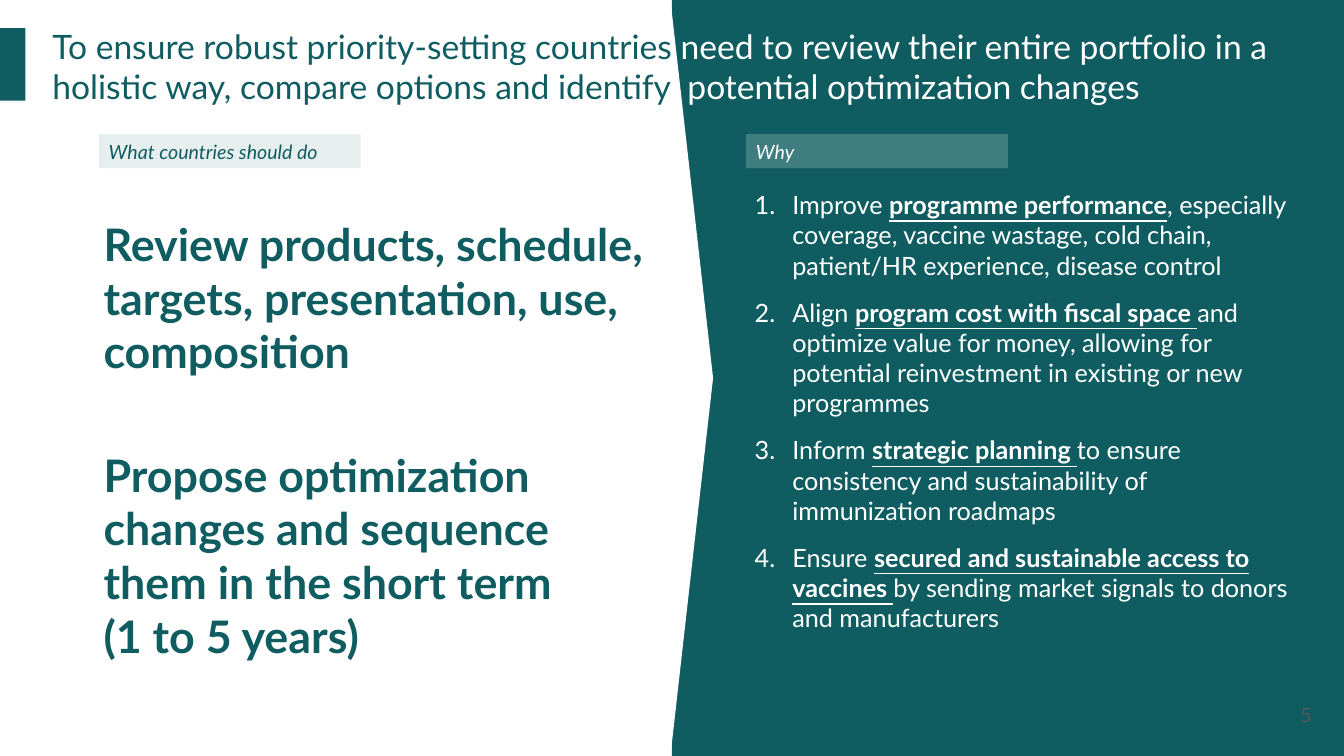
"""Build the slide on reviewing a country's vaccine portfolio."""
from lxml import etree
from pptx import Presentation
from pptx import util as u
from pptx.dml import color
from pptx.enum import shapes, text
from pptx.oxml import ns

HUES = {"teal": "0F5D61", "white": "FFFFFF", "grey": "595959"}


def add_block(page, kind, place, hue=None, opacity=100):
    left, top, width, height = [u.Cm(length) for length in place]
    if kind is None:
        box = page.shapes.add_textbox(left, top, width, height)
    else:
        box = page.shapes.add_shape(kind, left, top, width, height)
        box.shadow.inherit = False
        box.line.fill.background()
        box.fill.solid()
        box.fill.fore_color.rgb = color.RGBColor.from_string(HUES[hue])
        if opacity < 100:
            tint = box.fill._xPr.find(".//" + ns.qn("a:srgbClr"))
            etree.SubElement(tint, ns.qn("a:alpha"), val=str(opacity * 1000))
    box.text_frame.word_wrap = True
    return box


def add_span(para, words, size, hue, bold=False, italic=False, underline=False):
    span = para.add_run()
    span.text = words
    font = span.font
    font.name, font.size = "Lato", u.Pt(size)
    font.bold, font.italic, font.underline = bold, italic, underline
    font.color.rgb = color.RGBColor.from_string(HUES[hue])


deck = Presentation()
deck.slide_width, deck.slide_height = u.Cm(33.87), u.Cm(19.05)
page = deck.slides.add_slide(deck.slide_layouts[5])
RECT = shapes.MSO_SHAPE.RECTANGLE

add_block(page, RECT, (16.93, 0, 16.94, 19.05), "teal")
notch = add_block(page, shapes.MSO_SHAPE.ISOSCELES_TRIANGLE, (7.95, 8.99, 18.97, 1.07), "white")
notch.rotation = 90
add_block(page, RECT, (0, 0.71, 0.64, 1.83), "teal")

title = page.shapes.title
title.left, title.top, title.width, title.height = u.Cm(1.32), u.Cm(0.64), u.Cm(31.24), u.Cm(2.03)
frame = title.text_frame
frame.margin_left = frame.margin_right = frame.margin_top = frame.margin_bottom = 0
frame.auto_size = text.MSO_AUTO_SIZE.NONE
frame.vertical_anchor = text.MSO_ANCHOR.TOP
frame.word_wrap = True
headline = frame.paragraphs[0]
headline.alignment = text.PP_ALIGN.LEFT
for words, hue in [
    ("To ensure robust priority-setting countries ", "teal"),
    ("need to review their entire portfolio in a ", "white"),
    ("holistic way, compare options and identify  ", "teal"),
    ("potential optimization changes", "white"),
]:
    add_span(headline, words, 24, hue)
page.shapes.element.append(title.element)

reasons = [
    ("Improve ", "programme performance",
     ", especially coverage, vaccine wastage, cold chain, patient/HR experience, disease control"),
    ("Align ", "program cost with fiscal space ",
     "and optimize value for money, allowing for potential reinvestment in existing or new programmes"),
    ("Inform ", "strategic planning ",
     "to ensure consistency and sustainability of immunization roadmaps"),
    ("Ensure ", "secured and sustainable access to vaccines ",
     "by sending market signals to donors and manufacturers"),
]
frame = add_block(page, None, (18.77, 4.65, 14, 11.5)).text_frame
for index, (verb, goal, detail) in enumerate(reasons):
    para = frame.add_paragraph() if index else frame.paragraphs[0]
    props = para._p.get_or_add_pPr()
    props.set("marL", str(u.Cm(0.95)))
    props.set("indent", str(-u.Cm(0.95)))
    etree.SubElement(props, ns.qn("a:buFont"), typeface="+mj-lt")
    etree.SubElement(props, ns.qn("a:buAutoNum"), type="arabicPeriod")
    if index:
        para.space_before = u.Pt(12)
    add_span(para, verb, 18, "white")
    add_span(para, goal, 18, "white", bold=True, underline=True)
    add_span(para, detail, 18, "white")

actions = [
    (5.33, 15.09, ["Review products, schedule, targets, presentation, use, composition"]),
    (11.15, 14, ["Propose optimization changes and sequence them in the short term", "(1 to 5 years)"]),
]
for top, width, lines in actions:
    frame = add_block(page, None, (2.36, top, width, 5.7)).text_frame
    for index, line in enumerate(lines):
        para = frame.add_paragraph() if index else frame.paragraphs[0]
        add_span(para, line, 32, "teal", bold=True)

for left, label, hue, opacity in [
    (18.8, "Why", "white", 20),
    (2.49, "What countries should do", "teal", 10),
]:
    tag = add_block(page, RECT, (left, 3.38, 6.6, 0.86), hue, opacity)
    tag.text_frame.vertical_anchor = text.MSO_ANCHOR.MIDDLE
    para = tag.text_frame.paragraphs[0]
    para.alignment = text.PP_ALIGN.LEFT
    add_span(para, label, 14, hue, italic=True)

number = add_block(page, None, (30.77, 17.4, 2.54, 1.2))
number.text_frame.vertical_anchor = text.MSO_ANCHOR.MIDDLE
number.text_frame.paragraphs[0].alignment = text.PP_ALIGN.RIGHT
add_span(number.text_frame.paragraphs[0], "5", 14, "grey")

deck.save("out.pptx")
